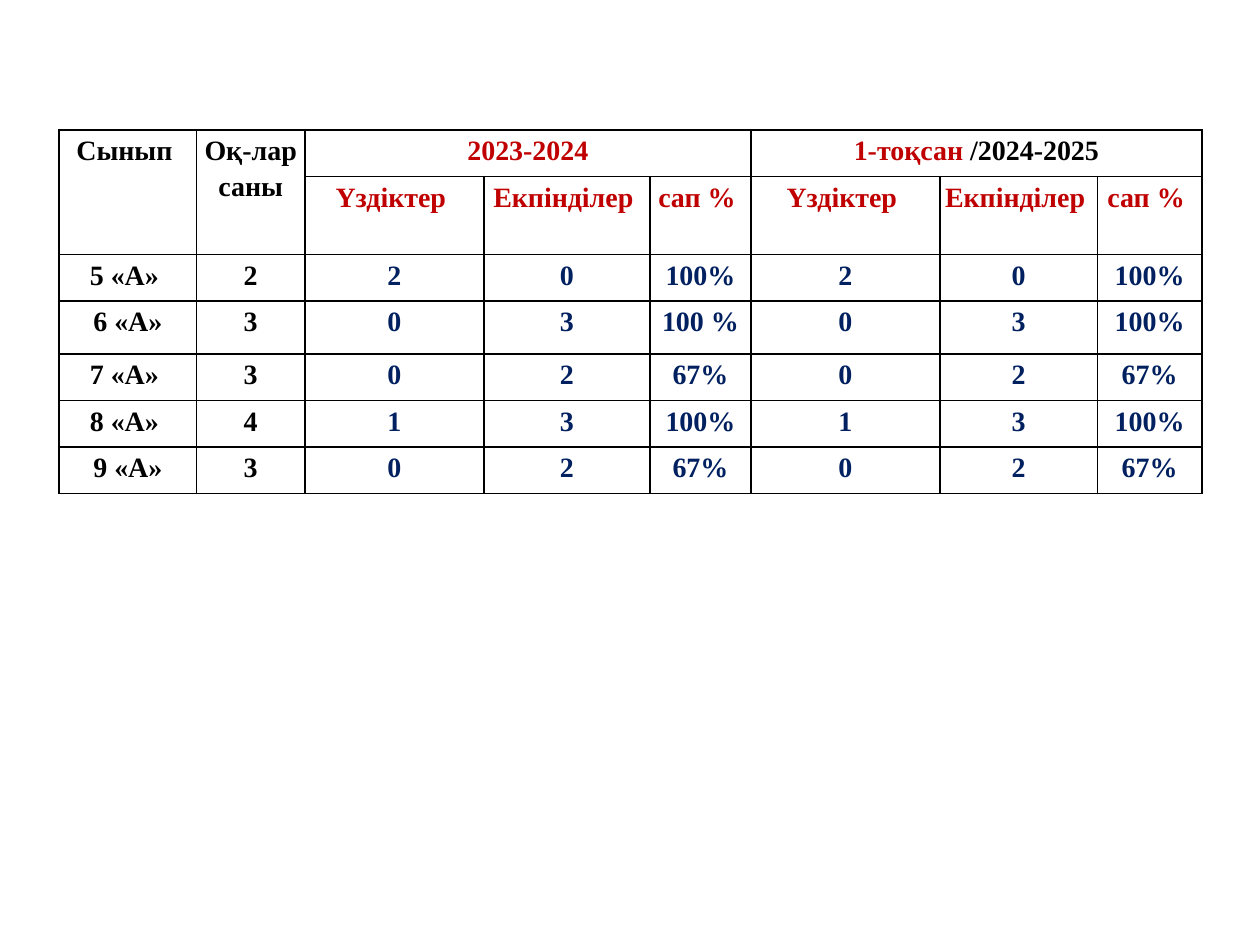
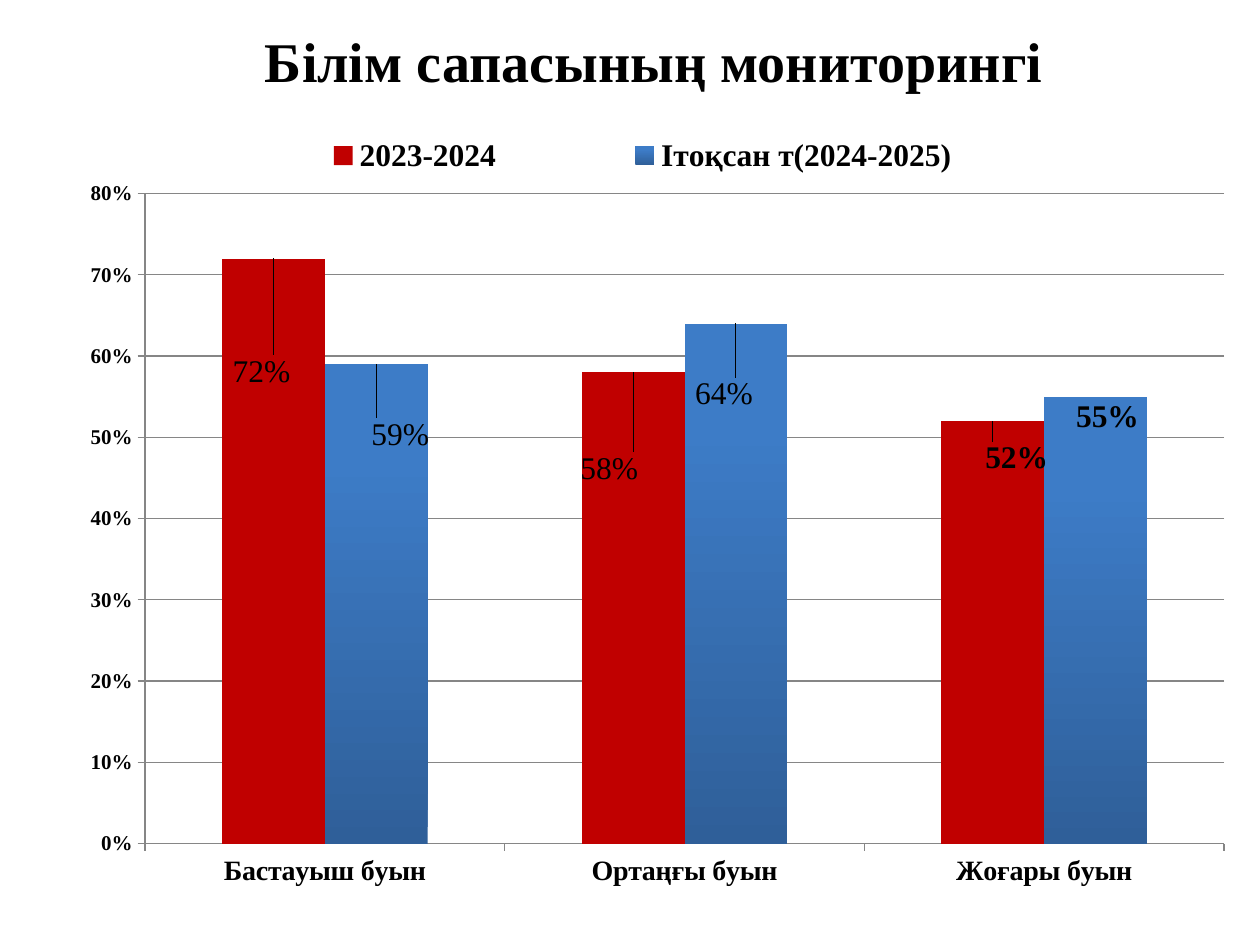
import dataclasses

import pptx
import pptx.chart.data
import pptx.dml.color
import pptx.enum.chart
import pptx.enum.text
import pptx.oxml
import pptx.oxml.ns
import pptx.util

Inches = pptx.util.Inches
Pt = pptx.util.Pt


@dataclasses.dataclass(frozen=True)
class Theme:
    """Colours, font and type sizes shared by the slides."""

    font: str = "Times New Roman"
    black: str = "000000"
    red: str = "C00000"
    navy: str = "002060"
    grid: str = "868686"
    bar_dark: str = "2F5F99"
    bar_light: str = "3D7CC7"
    title: int = 32
    label: int = 18
    body: int = 16
    tick: int = 12


THEME = Theme()

COLUMN_WIDTHS = (1.09, 0.86, 1.42, 1.32, 0.8, 1.5, 1.25, 0.83)
ROW_HEIGHTS = (0.37, 0.62, 0.37, 0.42, 0.37, 0.37, 0.37)
MEASURES = ("Үздіктер ", "Екпінділер ", "сап % ")
CLASS_RESULTS = (
    ("5 «А» ", "2", "2", "0", "100%", "2", "0", "100%"),
    ("6 «А»", "3", "0", "3", "100 %", "0", "3", "100%"),
    ("7 «А» ", "3", "0", "2", "67%", "0", "2", "67%"),
    ("8 «А» ", "4", "1", "3", "100%", "1", "3", "100%"),
    ("9 «А»", "3", "0", "2", "67%", "0", "2", "67%"),
)

STAGES = ("Бастауыш буын", "Ортаңғы буын", "Жоғары буын")
QUALITY = {
    "2023-2024": (0.72, 0.58, 0.52),
    "Iтоқсан т(2024-2025)": (0.59, 0.64, 0.55),
}
LABEL_OFFSETS = (
    ((-0.01, 0.16), (-0.02, 0.14), (0.02, 0.07)),
    ((0.02, 0.11), (-0.01, 0.11), (0.01, 0.05)),
)


def rgb(color):
    """Return an RGB colour from its hex code."""
    return pptx.dml.color.RGBColor.from_string(color)


def set_font(font, size, bold=True, color=THEME.black):
    """Format a font in the shared typeface."""
    font.name = THEME.font
    font.size = Pt(size)
    font.bold = bold
    font.color.rgb = rgb(color)


def add_run(p, text, size, color=THEME.black):
    """Add one formatted run to a centred paragraph."""
    p.alignment = pptx.enum.text.PP_ALIGN.CENTER
    r = p.add_run()
    r.text = text
    set_font(r.font, size, color=color)


def set_borders(cell):
    """Draw a thin black line on each side of a cell."""
    tcPr = cell._tc.get_or_add_tcPr()
    for i, side in enumerate(("lnL", "lnR", "lnT", "lnB")):
        tcPr.insert(i, pptx.oxml.parse_xml(
            f'<a:{side} {pptx.oxml.ns.nsdecls("a")} w="{Pt(1)}"><a:solidFill>'
            f'<a:srgbClr val="{THEME.black}"/></a:solidFill></a:{side}>'))


def fill_cell(cell, *runs):
    """Write (text, colour) runs into a table cell."""
    p = cell.text_frame.paragraphs[0]
    p.line_spacing = 1.15
    for text, color in runs:
        add_run(p, text, THEME.body, color)


def add_results_table(s, left, top):
    """Add the table of class results at the given corner."""
    table = s.shapes.add_table(
        len(ROW_HEIGHTS), len(COLUMN_WIDTHS), Inches(left), Inches(top),
        Inches(sum(COLUMN_WIDTHS)), Inches(sum(ROW_HEIGHTS))).table
    table.first_row = table.horz_banding = False
    for column, width in zip(table.columns, COLUMN_WIDTHS):
        column.width = Inches(width)
    for row, height in zip(table.rows, ROW_HEIGHTS):
        row.height = Inches(height)
    for cell in table.iter_cells():
        cell.margin_left = cell.margin_right = Inches(0.03)
        cell.margin_top, cell.margin_bottom = Inches(0.01), 0
        cell.fill.background()
        set_borders(cell)

    for col, text in enumerate(("Сынып ", "Оқ-лар саны")):
        table.cell(0, col).merge(table.cell(1, col))
        fill_cell(table.cell(0, col), (text, THEME.black))
    periods = {
        2: [("2023-2024", THEME.red)],
        5: [("1-тоқсан", THEME.red), (" /2024-2025", THEME.black)],
    }
    for start, runs in periods.items():
        table.cell(0, start).merge(table.cell(0, start + 2))
        fill_cell(table.cell(0, start), *runs)
        for i, text in enumerate(MEASURES):
            fill_cell(table.cell(1, start + i), (text, THEME.red))
    for row, values in enumerate(CLASS_RESULTS, 2):
        for col, text in enumerate(values):
            color = THEME.black if col < 2 else THEME.navy
            fill_cell(table.cell(row, col), (text, color))


def set_layout(element, index, x, y, size=None, inner=False):
    """Give a chart part a manual layout in fractions of the chart."""
    for old in element.xpath("c:layout"):
        element.remove(old)
    values = [("x", x), ("y", y)]
    if size:
        values = [("xMode", "edge"), ("yMode", "edge"), *values,
                  ("w", size[0]), ("h", size[1])]
    if inner:
        values.insert(0, ("layoutTarget", "inner"))
    parts = "".join(f'<c:{tag} val="{value}"/>' for tag, value in values)
    element.insert(index, pptx.oxml.parse_xml(
        f'<c:layout {pptx.oxml.ns.nsdecls("c")}>'
        f'<c:manualLayout>{parts}</c:manualLayout></c:layout>'))


def format_axes(chart):
    """Format both axes and the gridlines."""
    for axis, size in ((chart.category_axis, THEME.body),
                       (chart.value_axis, THEME.tick)):
        axis.major_tick_mark = pptx.enum.chart.XL_TICK_MARK.OUTSIDE
        axis.format.line.color.rgb = rgb(THEME.grid)
        set_font(axis.tick_labels.font, size)
    axis = chart.value_axis
    axis.minimum_scale, axis.maximum_scale, axis.major_unit = 0, 0.8, 0.1
    axis.tick_labels.number_format = "0%"
    axis.tick_labels.number_format_is_linked = False
    axis.has_major_gridlines = True
    axis.major_gridlines.format.line.color.rgb = rgb(THEME.grid)


def format_bars(plot):
    """Colour the bars and place their value labels."""
    plot.gap_width = 150
    plot.vary_by_categories = False
    previous, current = plot.series
    previous.format.fill.solid()
    previous.format.fill.fore_color.rgb = rgb(THEME.red)
    fill = current.format.fill
    fill.gradient()
    fill.gradient_angle = 90
    shades = ((0, THEME.bar_dark), (0.8, THEME.bar_light))
    for stop, (position, color) in zip(fill.gradient_stops, shades):
        stop.position = position
        stop.color.rgb = rgb(color)

    for series, offsets in zip(plot.series, LABEL_OFFSETS):
        for i in range(len(offsets)):
            label = series.points[i].data_label
            set_font(label.font, THEME.label, bold=i == 2)
            label.position = pptx.enum.chart.XL_LABEL_POSITION.OUTSIDE_END
        for dLbl, offset in zip(series._element.xpath("c:dLbls/c:dLbl"), offsets):
            set_layout(dLbl, 1, *offset)


def add_quality_chart(s, left, top, width, height):
    """Add the clustered columns of quality by school stage."""
    data = pptx.chart.data.CategoryChartData(number_format="0%")
    data.categories = STAGES
    for name, values in QUALITY.items():
        data.add_series(name, values)
    chart = s.shapes.add_chart(
        pptx.enum.chart.XL_CHART_TYPE.COLUMN_CLUSTERED, Inches(left),
        Inches(top), Inches(width), Inches(height), data).chart
    chart.has_title = False
    set_font(chart.font, THEME.label, bold=False)
    format_axes(chart)
    format_bars(chart.plots[0])
    chart.has_legend = True
    legend = chart.legend
    legend.position = pptx.enum.chart.XL_LEGEND_POSITION.TOP
    legend.include_in_layout = False
    set_font(legend.font, THEME.label)
    set_layout(legend._element, 1, 0.15, 0.04, (0.73, 0.05))
    plot_area = chart._chartSpace.xpath("c:chart/c:plotArea")[0]
    set_layout(plot_area, 0, 0.1, 0.11, (0.9, 0.77), inner=True)


def set_title(s, text, left, top, width, height):
    """Move and write the title placeholder."""
    sp = s.shapes.title
    sp.left, sp.top = Inches(left), Inches(top)
    sp.width, sp.height = Inches(width), Inches(height)
    tf = sp.text_frame
    tf.word_wrap = True
    tf.vertical_anchor = pptx.enum.text.MSO_ANCHOR.MIDDLE
    add_run(tf.paragraphs[0], text, THEME.title)


def main():
    """Build and save the two slides."""
    prs = pptx.Presentation()
    prs.slide_width, prs.slide_height = Inches(10), Inches(7.5)
    s = prs.slides.add_slide(prs.slide_layouts.get_by_name("Blank"))
    add_results_table(s, 0.47, 1.03)
    s = prs.slides.add_slide(prs.slide_layouts.get_by_name("Title Only"))
    set_title(s, "Білім сапасының мониторингі", 0.67, 0.16, 9.04, 0.64)
    add_quality_chart(s, 0.2, 0.8, 9.52, 6.7)
    prs.save("out.pptx")


if __name__ == "__main__":
    main()
